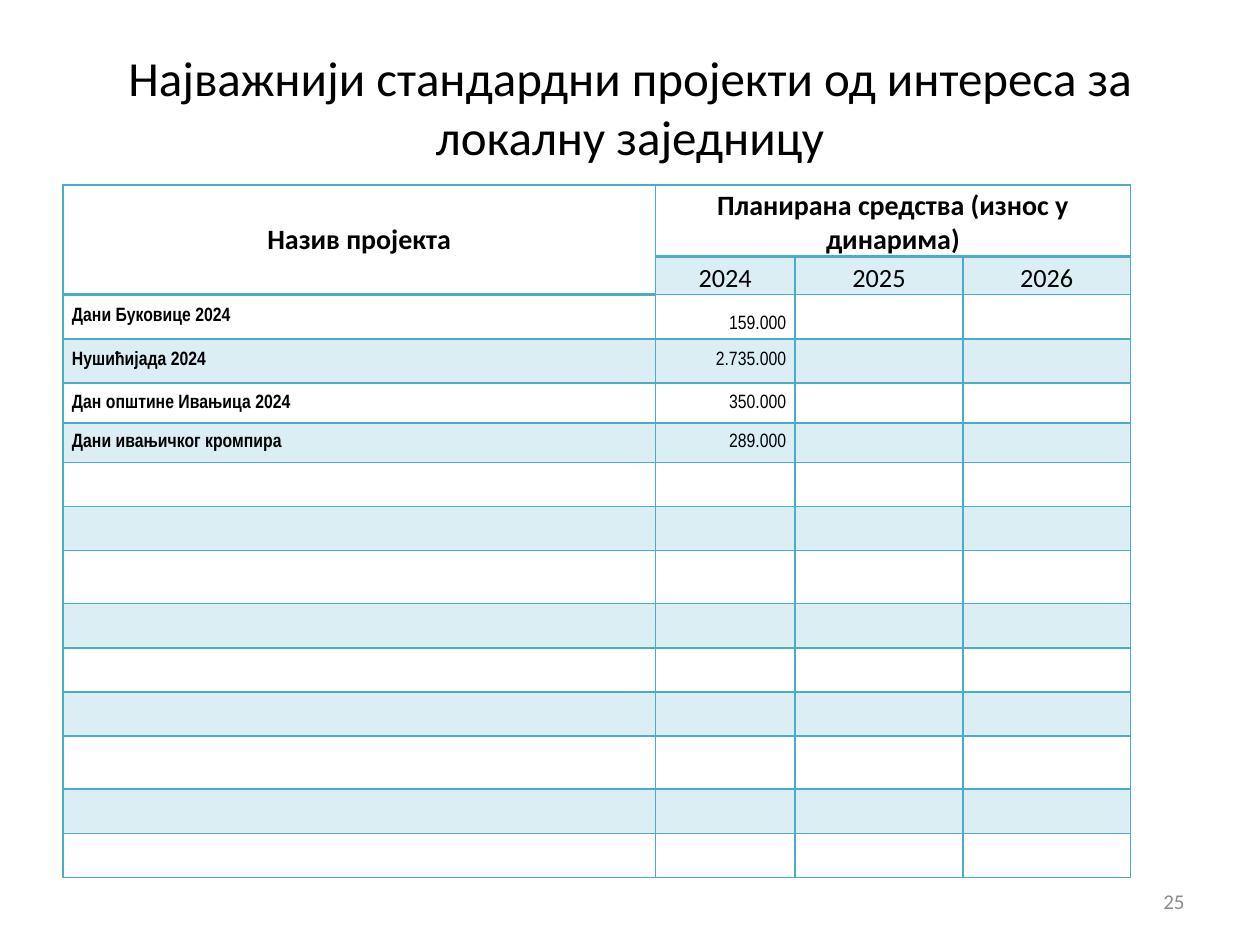
from dataclasses import dataclass

import pptx
import pptx.dml.color
import pptx.enum.text
import pptx.oxml
import pptx.oxml.ns
import pptx.util

Cm = pptx.util.Cm
Pt = pptx.util.Pt
ALIGN = pptx.enum.text.PP_ALIGN
ANCHOR = pptx.enum.text.MSO_ANCHOR

ACCENT = "4BACC6"
BAND = "DBEEF4"
BLACK = "000000"
GRAY = "8C8C8C"
COLUMNS = [11.94, 2.82, 3.38, 3.38]
ROWS = [1.45, 0.76, 0.89, 0.89, 0.81, 0.79] + [0.89, 0.89, 1.07, 0.89] * 2 + [0.89]
YEARS = ["2024", "2025", "2026"]


@dataclass
class Project:
    name: str
    amount: str
    anchor: ANCHOR = ANCHOR.MIDDLE


@dataclass
class Style:
    size: float
    font: str = "Calibri"
    color: str = BLACK
    bold: bool = False
    align: ALIGN = ALIGN.CENTER


PROJECTS = [
    Project("Дани Буковице 2024", "159.000", ANCHOR.BOTTOM),
    Project("Нушићијада 2024", "2.735.000"),
    Project("Дан општине Ивањица 2024", "350.000"),
    Project("Дани ивањичког кромпира", "289.000"),
]
HEADER = Style(16, bold=True)
YEAR = Style(15)
NAME = Style(11, "Arial Narrow", bold=True, align=ALIGN.LEFT)
AMOUNT = Style(11, "Arial Narrow", align=ALIGN.RIGHT)


def rgb(value: str) -> pptx.dml.color.RGBColor:
    return pptx.dml.color.RGBColor.from_string(value)


def write(tf, text: str, style: Style) -> None:
    tf.text = text
    p = tf.paragraphs[0]
    p.alignment = style.align
    for r in p.runs:
        r.font.size = Pt(style.size)
        r.font.name = style.font
        r.font.bold = style.bold
        r.font.color.rgb = rgb(style.color)


def add_text(s, box: tuple, text: str, style: Style) -> None:
    sp = s.shapes.add_textbox(*(Cm(v) for v in box))
    tf = sp.text_frame
    tf.word_wrap = True
    tf.vertical_anchor = ANCHOR.MIDDLE
    write(tf, text, style)


def set_border(cell, side: str, width: float) -> None:
    ns = pptx.oxml.ns.nsdecls("a")
    cell._tc.get_or_add_tcPr().append(pptx.oxml.parse_xml(
        f'<a:ln{side} {ns} w="{Pt(width)}"><a:solidFill>'
        f'<a:srgbClr val="{ACCENT}"/></a:solidFill></a:ln{side}>'))


def format_cell(cell, row: int, col: int) -> None:
    cell.margin_left = cell.margin_right = Cm(0.18)
    cell.margin_top = cell.margin_bottom = 0
    heavy_below = row == 0 or (row == 1 and col == 0)
    heavy_above = (row == 1 and col > 0) or (row == 2 and col == 0)
    for side in "LRTB":
        heavy = (side == "B" and heavy_below) or (side == "T" and heavy_above)
        set_border(cell, side, 2 if heavy else 1)
    if row % 2 and (row > 1 or col > 0):
        cell.fill.solid()
        cell.fill.fore_color.rgb = rgb(BAND)
    else:
        cell.fill.background()


def fill_cell(cell, text: str, style: Style, anchor: ANCHOR) -> None:
    cell.vertical_anchor = anchor
    write(cell.text_frame, text, style)


def add_project_table(s) -> None:
    frame = s.shapes.add_table(len(ROWS), len(COLUMNS), Cm(1.27), Cm(3.73),
                               Cm(sum(COLUMNS)), Cm(sum(ROWS)))
    table = frame.table
    table.first_row = table.horz_banding = False
    for column, width in zip(table.columns, COLUMNS):
        column.width = Cm(width)
    for i, height in enumerate(ROWS):
        table.rows[i].height = Cm(height)
        for j in range(len(COLUMNS)):
            format_cell(table.cell(i, j), i, j)

    table.cell(0, 0).merge(table.cell(1, 0))
    table.cell(0, 1).merge(table.cell(0, 3))
    fill_cell(table.cell(0, 0), "Назив пројекта", HEADER, ANCHOR.MIDDLE)
    fill_cell(table.cell(0, 1), "Планирана средства (износ у динарима)",
              HEADER, ANCHOR.BOTTOM)
    for j, year in enumerate(YEARS, 1):
        fill_cell(table.cell(1, j), year, YEAR, ANCHOR.BOTTOM)
    for i, project in enumerate(PROJECTS, 2):
        fill_cell(table.cell(i, 0), project.name, NAME, ANCHOR.MIDDLE)
        amount = table.cell(i, 1)
        fill_cell(amount, project.amount, AMOUNT, project.anchor)
        if project.anchor == ANCHOR.BOTTOM:
            amount.margin_bottom = Cm(0.1)


def main() -> None:
    prs = pptx.Presentation()
    prs.slide_width, prs.slide_height = Cm(25.4), Cm(19.05)
    s = prs.slides.add_slide(prs.slide_layouts[6])
    add_text(s, (1.27, 0.76, 22.86, 2.77),
             "Најважнији стандардни пројекти од интереса за локалну заједницу",
             Style(28))
    add_project_table(s)
    add_text(s, (18.2, 17.66, 5.93, 1.01), "25",
             Style(12, color=GRAY, align=ALIGN.RIGHT))
    prs.save("out.pptx")


if __name__ == "__main__":
    main()
